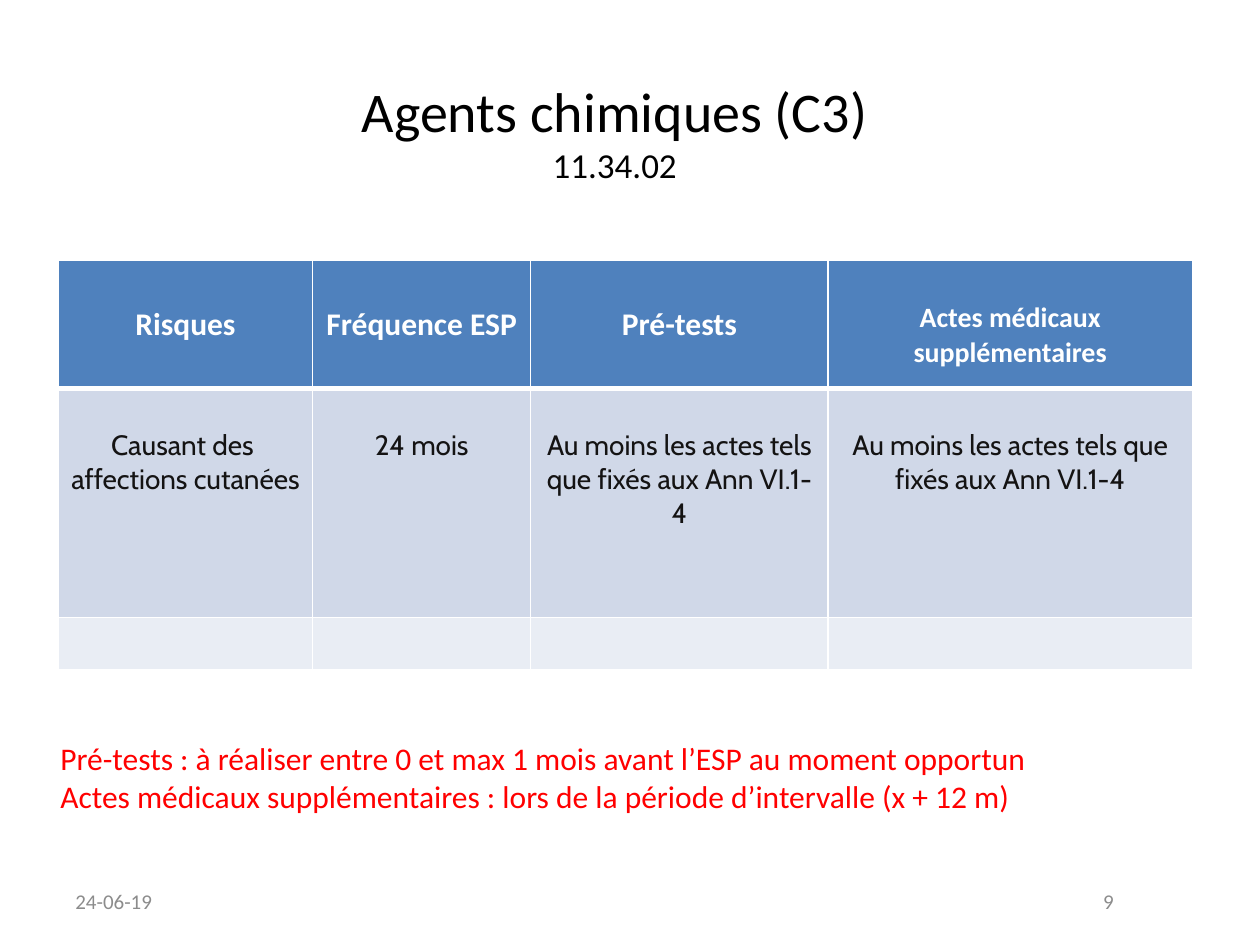
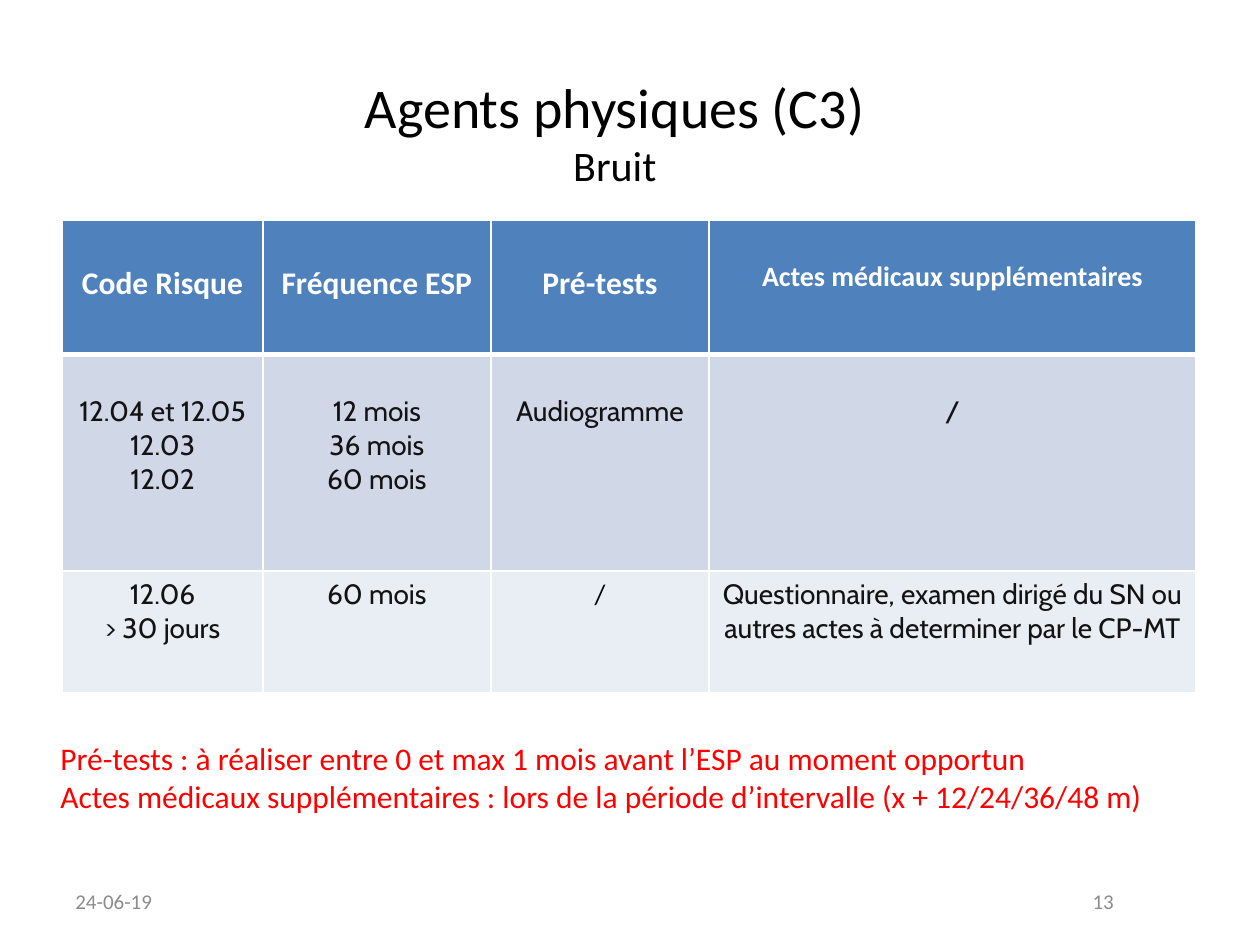
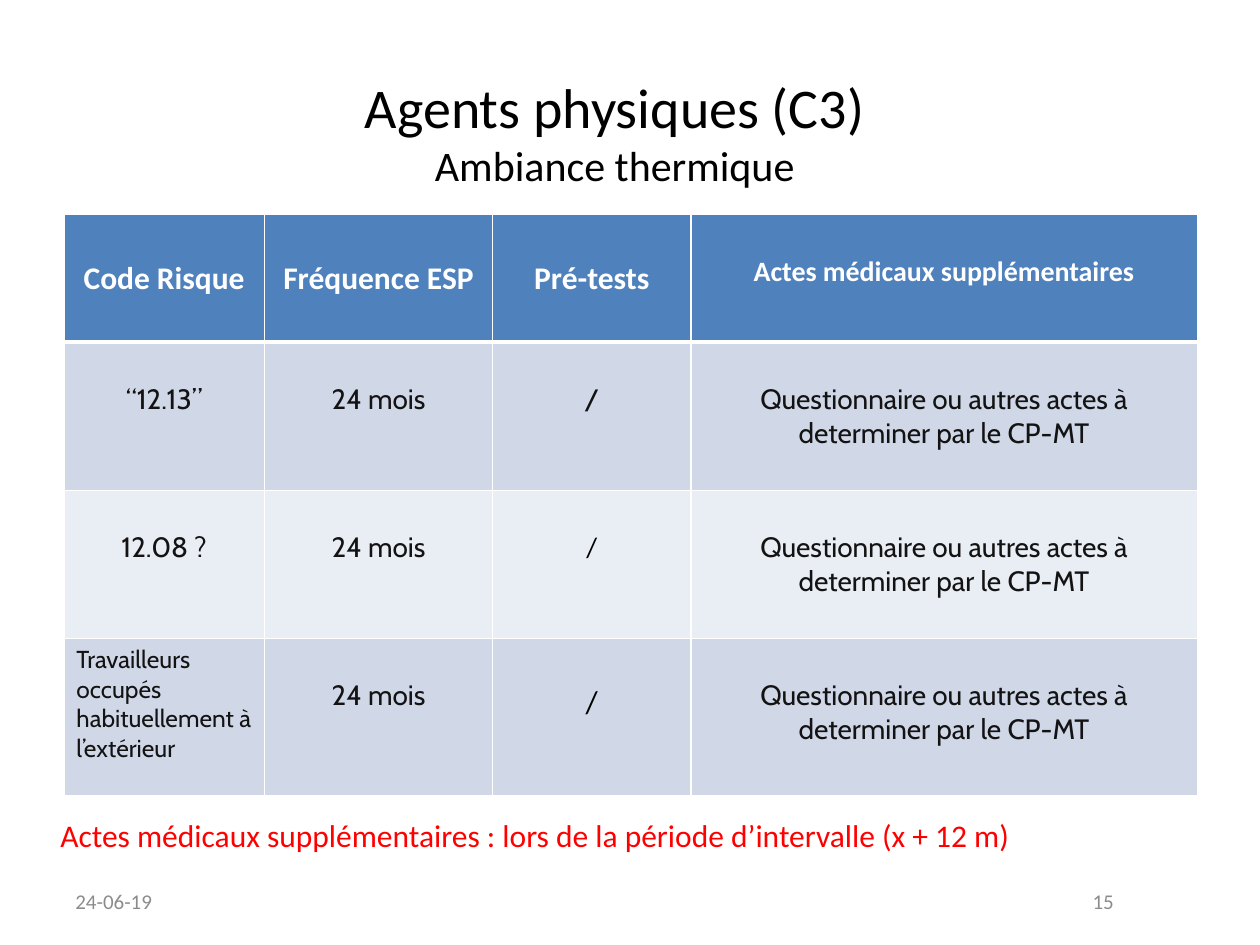
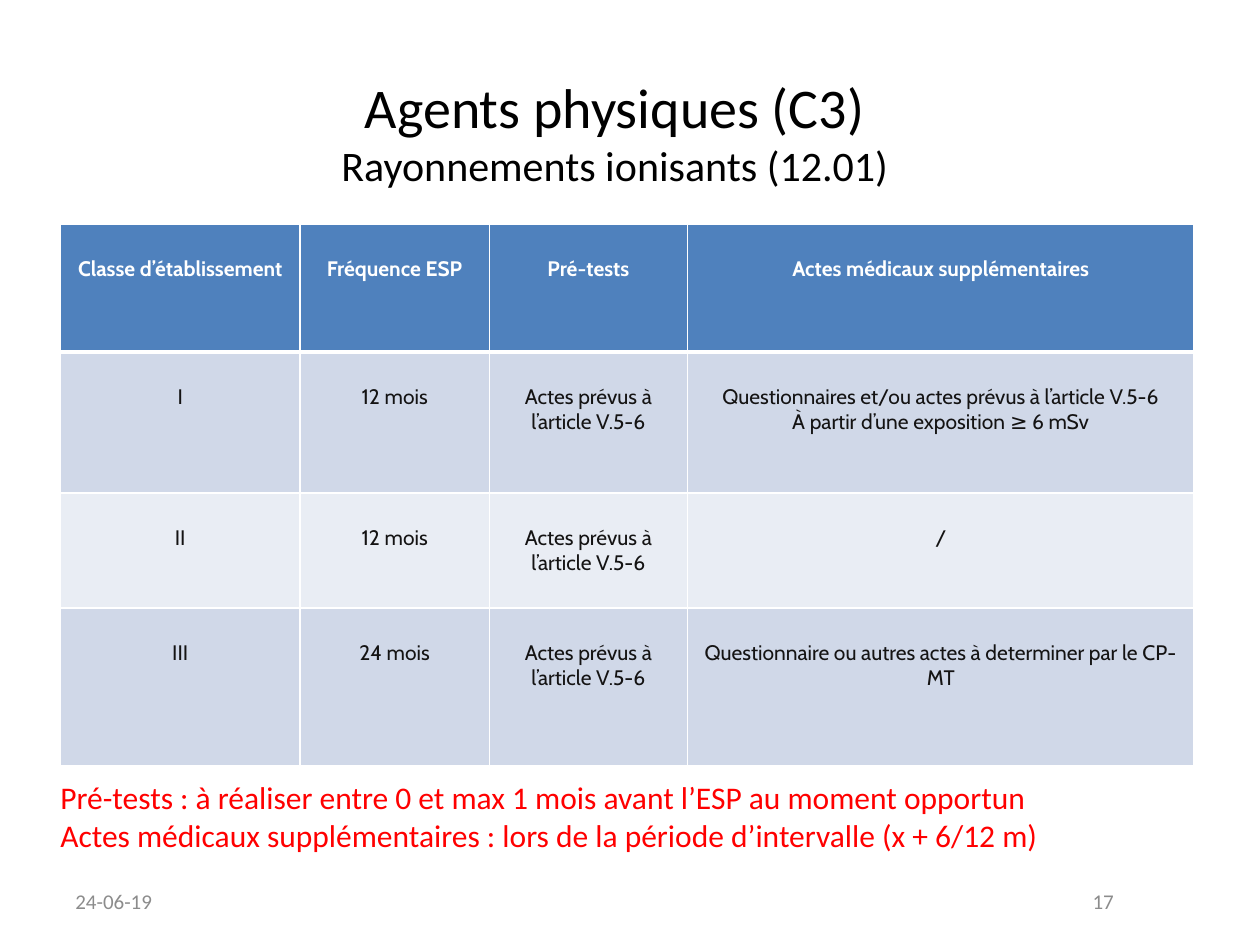
from dataclasses import dataclass, replace

from lxml.etree import SubElement
from pptx import Presentation
from pptx.dml.color import RGBColor
from pptx.enum.text import MSO_ANCHOR, MSO_AUTO_SIZE, PP_ALIGN
from pptx.oxml.ns import qn
from pptx.util import Pt


@dataclass(frozen=True)
class TextStyle:
    font: str
    size: float
    color: str
    bold: bool = False


@dataclass(frozen=True)
class Theme:
    title: TextStyle = TextStyle("Calibri", 32, "000000")
    subtitle: TextStyle = TextStyle("Calibri", 24, "000000")
    subtitle_small: TextStyle = TextStyle("Calibri", 20, "000000")
    heading: TextStyle = TextStyle("Calibri", 18, "FFFFFF", True)
    heading_long: TextStyle = TextStyle("Calibri", 16, "FFFFFF", True)
    heading_small: TextStyle = TextStyle("Cabin", 12, "FFFFFF", True)
    body: TextStyle = TextStyle("Cabin", 16, "141313")
    body_narrow: TextStyle = TextStyle("Cabin", 14, "141313")
    body_small: TextStyle = TextStyle("Cabin", 12, "141313")
    dash: TextStyle = TextStyle("Calibri", 16, "000000")
    dash_large: TextStyle = TextStyle("Calibri", 18, "000000")
    note: TextStyle = TextStyle("Calibri", 18, "FF0000")
    footer: TextStyle = TextStyle("Calibri", 12, "8C8C8C")
    header_fill: str = "4F81BD"
    band_fills: tuple = ("D0D8E8", "E9EDF4")
    border: str = "FFFFFF"
    thin: float = 1
    thick: float = 3
    inset: float = 3.6
    line_height: float = 1.22


THEME = Theme()
DATE = "24-06-19"
PRE_TESTS_NOTE = "Pré-tests : à réaliser entre 0 et max 1 mois avant l’ESP au moment opportun"
ACTS_NOTE = "Actes médicaux supplémentaires : lors de la période d’intervalle (x + {} m)"
ACTS = "Actes médicaux supplémentaires"
QUESTIONNAIRE = "Questionnaire ou autres actes à determiner par le CP-MT"
FIXED_ACTS = "Au moins les actes tels que fixés aux Ann VI.1-4"
ARTICLE_ACTS = "Actes prévus à l’article V.5-6"


@dataclass(frozen=True)
class Entry:
    text: str
    style: TextStyle = THEME.body
    lead: int = 1
    align: PP_ALIGN = PP_ALIGN.CENTER


def top_inset(style, lead):
    return Pt(THEME.inset + lead * THEME.line_height * style.size)


def add_run(paragraph, text, style):
    run = paragraph.add_run()
    run.text = text
    run.font.name = style.font
    run.font.size = Pt(style.size)
    run.font.bold = style.bold
    run.font.color.rgb = RGBColor.from_string(style.color)


def write_lines(frame, lines, style, align):
    for index, line in enumerate(lines):
        paragraph = frame.add_paragraph() if index else frame.paragraphs[0]
        paragraph.alignment = align
        add_run(paragraph, line, style)


def add_text(slide, box, lines, style, align=PP_ALIGN.LEFT, anchor=MSO_ANCHOR.TOP, lead=0):
    frame = slide.shapes.add_textbox(*map(Pt, box)).text_frame
    frame.word_wrap = True
    frame.auto_size = MSO_AUTO_SIZE.NONE
    frame.vertical_anchor = anchor
    frame.margin_top = top_inset(style, lead)
    write_lines(frame, lines, style, align)


def set_title(slide, heading, subheading, subheading_style):
    title = slide.shapes.title
    title.left, title.top, title.width, title.height = map(Pt, (87.84, 71.28, 527, 40.3))
    frame = title.text_frame
    frame.auto_size = MSO_AUTO_SIZE.NONE
    frame.word_wrap = True
    frame.vertical_anchor = MSO_ANCHOR.MIDDLE
    frame.margin_top, frame.margin_bottom = Pt(0), Pt(33)
    paragraph = frame.paragraphs[0]
    paragraph.alignment = PP_ALIGN.CENTER
    add_run(paragraph, heading, THEME.title)
    paragraph.add_line_break()
    add_run(paragraph, subheading, subheading_style)


def set_borders(cell, top, bottom):
    properties = cell._tc.get_or_add_tcPr()
    sides = (("lnL", THEME.thin), ("lnR", THEME.thin), ("lnT", top), ("lnB", bottom))
    for position, (side, width) in enumerate(sides):
        line = SubElement(properties, qn(f"a:{side}"), w=str(Pt(width)))
        fill = SubElement(line, qn("a:solidFill"))
        SubElement(fill, qn("a:srgbClr"), val=THEME.border)
        properties.insert(position, line)


def fill_cell(cell, entry, row):
    cell.fill.solid()
    fill = THEME.band_fills[(row - 1) % 2] if row else THEME.header_fill
    cell.fill.fore_color.rgb = RGBColor.from_string(fill)
    set_borders(
        cell,
        THEME.thick if row == 1 else THEME.thin,
        THEME.thick if row == 0 else THEME.thin,
    )
    if entry.text:
        cell.margin_top = top_inset(entry.style, entry.lead)
        write_lines(cell.text_frame, entry.text.split("\n"), entry.style, entry.align)


def add_risk_table(slide, left, top, widths, heights, rows):
    table = slide.shapes.add_table(
        len(rows), len(widths), Pt(left), Pt(top), Pt(sum(widths)), Pt(sum(heights))
    ).table
    for column, width in zip(table.columns, widths):
        column.width = Pt(width)
    for table_row, height in zip(table.rows, heights):
        table_row.height = Pt(height)
    for row, entries in enumerate(rows):
        for column, entry in enumerate(entries):
            fill_cell(table.cell(row, column), entry, row)


def header_row(first):
    labels = [first, "Fréquence ESP", "Pré-tests"]
    return [Entry(label, THEME.heading) for label in labels] + [Entry(ACTS, THEME.heading_long)]


def styled_row(style, *texts):
    return [Entry(text, style) for text in texts]


def body_row(*texts):
    return styled_row(THEME.body, *texts)


def add_risk_slide(deck, number, heading, subheading, table, notes,
                   note_lead=0, subheading_style=THEME.subtitle):
    slide = deck.slides.add_slide(deck.slide_layouts[5])
    set_title(slide, heading, subheading, subheading_style)
    add_risk_table(slide, *table)
    add_text(slide, (36, 500.4, 167.8, 28.8), [DATE], THEME.footer, anchor=MSO_ANCHOR.MIDDLE)
    add_text(slide, (516.2, 500.4, 127.4, 28.8), [str(number)], THEME.footer,
             PP_ALIGN.RIGHT, MSO_ANCHOR.MIDDLE)
    note_height = 94.3 if note_lead else 72.7
    add_text(slide, (27.4, 419, 648, note_height), notes, THEME.note, lead=note_lead)


def add_chemical_slide(deck):
    rows = [
        header_row("Risques"),
        body_row("Causant des \naffections cutanées", "24 mois", FIXED_ACTS, FIXED_ACTS),
        body_row(*[""] * 4),
    ]
    table = (33.4, 149, (145.3, 124.6, 170, 208.1), (73, 131, 29.7), rows)
    notes = [PRE_TESTS_NOTE, ACTS_NOTE.format("12")]
    add_risk_slide(deck, 9, "Agents chimiques (C3)", "11.34.02", table, notes,
                   subheading_style=THEME.subtitle_small)


def add_noise_slide(deck):
    questionnaire = "Questionnaire, examen dirigé du SN ou autres actes à determiner par le CP-MT"
    last_row = body_row("12.06\n> 30 jours", "60 mois", "/", questionnaire)
    last_row[2] = Entry("/", THEME.dash)
    rows = [
        header_row("Code Risque"),
        body_row("12.04 et 12.05\n12.03\n12.02", "12 mois\n36 mois\n60 mois", "Audiogramme", "/"),
        [replace(entry, lead=0) for entry in last_row],
    ]
    table = (35.6, 125.6, (114.6, 130.3, 124.8, 278.1), (77, 123.8, 69.5), rows)
    notes = [PRE_TESTS_NOTE, ACTS_NOTE.format("12/24/36/48")]
    add_risk_slide(deck, 13, "Agents physiques (C3)", "Bruit", table, notes)


def add_thermal_slide(deck):
    frequency, questionnaire = body_row("24 mois", QUESTIONNAIRE)
    outdoor = Entry("Travailleurs occupés habituellement à l’extérieur",
                    THEME.body_narrow, 0, PP_ALIGN.LEFT)
    rows = [
        header_row("Code Risque"),
        [Entry("“12.13”"), frequency, Entry("/"), questionnaire],
        [Entry("12.08 ?"), frequency, Entry("/", THEME.dash), questionnaire],
        [outdoor, frequency, Entry("/", THEME.dash_large), questionnaire],
    ]
    table = (36.5, 122.6, (114.6, 130.5, 113.2, 289.5), (72.8, 84.8, 84.6, 90), rows)
    add_risk_slide(deck, 15, "Agents physiques (C3)", "Ambiance thermique", table,
                   [ACTS_NOTE.format("12")], note_lead=2)


def add_radiation_slide(deck):
    exposure = ("Questionnaires et/ou actes prévus à l’article V.5-6\n"
                "À partir d’une exposition ≥ 6 mSv")
    classes = [
        ("I", "12 mois", ARTICLE_ACTS, exposure),
        ("II", "12 mois", ARTICLE_ACTS, "/"),
        ("III", "24 mois", ARTICLE_ACTS, QUESTIONNAIRE),
    ]
    rows = [styled_row(THEME.heading_small, "Classe d’établissement",
                       "Fréquence ESP", "Pré-tests", ACTS)]
    rows += [styled_row(THEME.body_small, *texts) for texts in classes]
    table = (34.6, 128.3, (136.8, 108.2, 113.3, 289.5), (72.8, 80.6, 65.7, 90), rows)
    notes = [PRE_TESTS_NOTE, ACTS_NOTE.format("6/12")]
    add_risk_slide(deck, 17, "Agents physiques (C3)", "Rayonnements ionisants (12.01)",
                   table, notes, note_lead=1)


def main():
    deck = Presentation()
    deck.slide_width, deck.slide_height = Pt(720), Pt(540)
    add_chemical_slide(deck)
    add_noise_slide(deck)
    add_thermal_slide(deck)
    add_radiation_slide(deck)
    deck.save("out.pptx")


if __name__ == "__main__":
    main()
